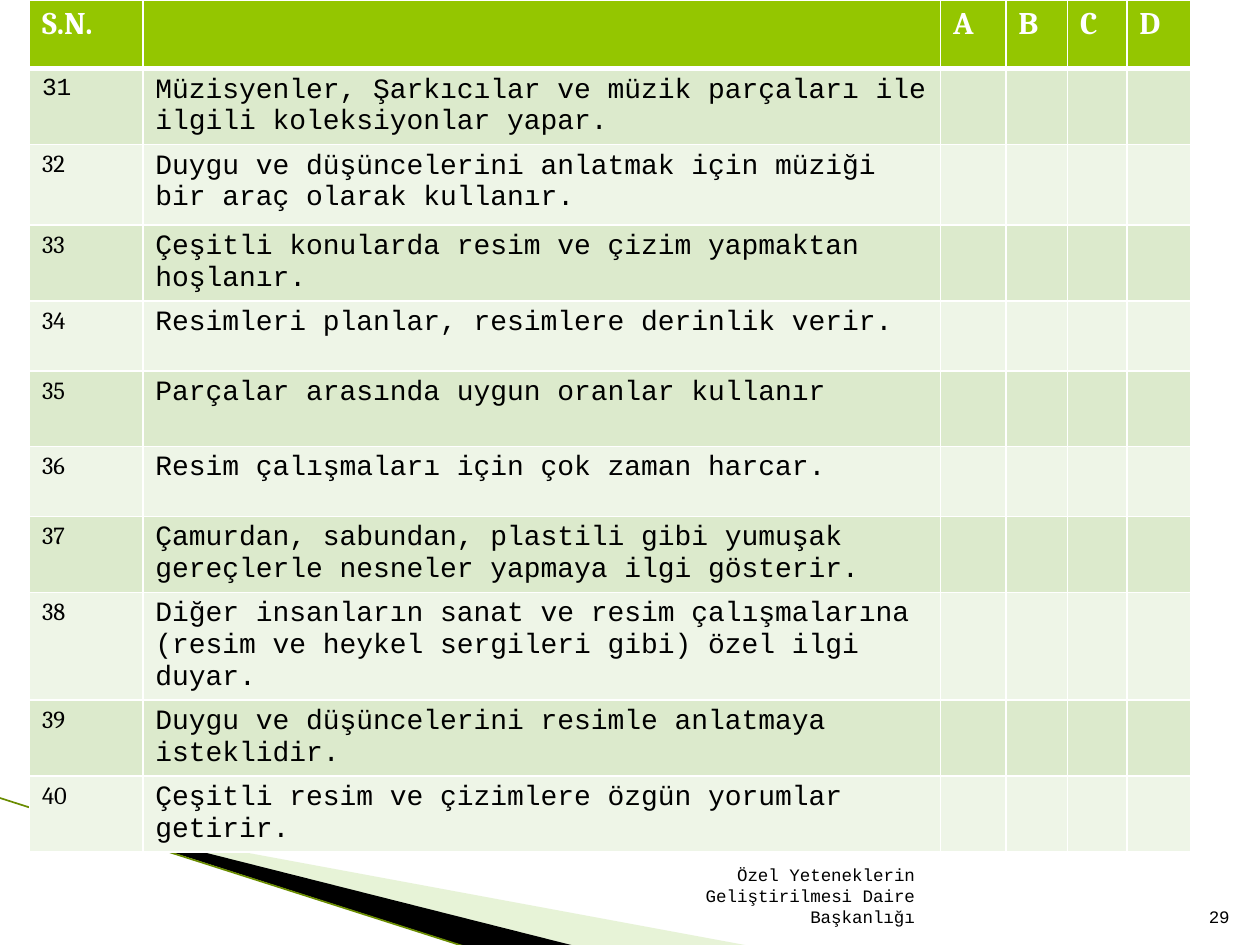
from dataclasses import dataclass

from lxml.etree import SubElement as Sub
from pptx import Presentation
from pptx.dml.color import RGBColor as RGB
from pptx.enum.shapes import MSO_CONNECTOR as Conn
from pptx.enum.text import MSO_ANCHOR as Anchor, PP_ALIGN as Align
from pptx.oxml.ns import qn
from pptx.util import Pt


@dataclass(frozen=True)
class Theme:
    head: str = "94C600"
    odd: str = "DCEACC"
    even: str = "EEF5E7"
    pale: str = "C3E19D"
    edge: str = "6A8C00"
    white: str = "FFFFFF"
    black: str = "000000"
    serif: str = "Cambria"
    mono: str = "Courier New"
    title: int = 18
    body: int = 16
    number: int = 14
    small: int = 10


COLS = [64.8, 455.8, 37.4, 35.3, 33.8, 36.7]
ROWS = [39.2, 39, 46, 40, 40, 43, 40, 40, 43, 43, 40]
HEADS = ["S.N.", "", "A", "B", "C", "D"]
FIRST = 31
ITEMS = [
    "Müzisyenler, Şarkıcılar ve müzik parçaları ile ilgili koleksiyonlar yapar.",
    "Duygu ve düşüncelerini anlatmak için müziği bir araç olarak kullanır.",
    "Çeşitli konularda resim ve çizim yapmaktan hoşlanır.",
    "Resimleri planlar, resimlere derinlik verir.",
    "Parçalar arasında uygun oranlar kullanır",
    "Resim çalışmaları için çok zaman harcar.",
    "Çamurdan, sabundan, plastili gibi yumuşak gereçlerle nesneler yapmaya ilgi gösterir.",
    "Diğer insanların sanat ve resim çalışmalarına (resim ve heykel sergileri gibi) "
    "özel ilgi duyar.",
    "Duygu ve düşüncelerini resimle anlatmaya isteklidir.",
    "Çeşitli resim ve çizimlere özgün yorumlar getirir.",
]


class Page:
    def __init__(self, slide, theme):
        self.slide = slide
        self.theme = theme

    def style(self, frame, text, size, face, color, bold=False):
        frame.text = text
        for run in frame.paragraphs[0].runs:
            font = run.font
            font.size, font.name, font.bold = Pt(size), face, bold
            font.color.rgb = RGB.from_string(color)

    def wedge(self, points, color, alpha=100):
        start, *rest = [(Pt(x), Pt(y)) for x, y in points]
        pen = self.slide.shapes.build_freeform(*start)
        pen.add_line_segments(rest, close=True)
        shape = pen.convert_to_shape()
        shape.shadow.inherit = False
        shape.line.fill.background()
        shape.fill.solid()
        shape.fill.fore_color.rgb = RGB.from_string(color)
        if alpha < 100:
            tint = next(shape._element.spPr.iter(qn("a:srgbClr")))
            Sub(tint, qn("a:alpha"), val=str(alpha * 1000))

    def line(self, x1, y1, x2, y2, color, width):
        line = self.slide.shapes.add_connector(
            Conn.STRAIGHT, Pt(x1), Pt(y1), Pt(x2), Pt(y2))
        line.line.color.rgb = RGB.from_string(color)
        line.line.width = Pt(width)
        Sub(line._element.spPr, qn("a:effectLst"))

    def label(self, x, y, w, h, text):
        frame = self.slide.shapes.add_textbox(Pt(x), Pt(y), Pt(w), Pt(h)).text_frame
        frame.word_wrap = True
        frame.vertical_anchor = Anchor.BOTTOM
        t = self.theme
        self.style(frame, text, t.small, t.mono, t.black)
        frame.paragraphs[0].alignment = Align.RIGHT

    def border(self, cell, top=1, bottom=1):
        props = cell._tc.get_or_add_tcPr()
        for side, width in zip("LRTB", (1, 1, top, bottom)):
            edge = Sub(props, qn(f"a:ln{side}"), w=str(Pt(width)))
            Sub(Sub(edge, qn("a:solidFill")), qn("a:srgbClr"), val=self.theme.white)

    def cell(self, cell, row, col, text):
        t = self.theme
        self.border(cell, top=3 if row == 1 else 1, bottom=3 if row == 0 else 1)
        fill = t.head if row == 0 else t.odd if row % 2 else t.even
        cell.fill.solid()
        cell.fill.fore_color.rgb = RGB.from_string(fill)
        if row == 0:
            look = t.title, t.serif, t.white, True
        elif col == 0:
            look = t.number, t.mono if row == 1 else t.serif, t.black
        else:
            look = t.body, t.mono, t.black
        self.style(cell.text_frame, text, *look)

    def table(self, x, y, cols, rows, data):
        grid = self.slide.shapes.add_table(
            len(rows), len(cols), Pt(x), Pt(y), Pt(sum(cols)), Pt(sum(rows))).table
        for col, width in zip(grid.columns, cols):
            col.width = Pt(width)
        for row, height in zip(grid.rows, rows):
            row.height = Pt(height)
        for r, texts in enumerate(data):
            for c, text in enumerate(texts):
                self.cell(grid.cell(r, c), r, c, text)


def main():
    deck = Presentation()
    deck.slide_width, deck.slide_height = Pt(720), Pt(540)
    theme = Theme()
    page = Page(deck.slides.add_slide(deck.slide_layouts[6]), theme)

    page.wedge([(39.6, 468.5), (428.4, 540.5), (328.3, 540.5), (39.6, 468)],
               theme.pale, alpha=40)
    page.wedge([(38.2, 467.3), (329, 540.7), (267.8, 541.4), (38.9, 468)], theme.black)
    page.line(-0.7, 455.8, 267.1, 541.4, theme.edge, 0.95)

    blank = [""] * 4
    data = [HEADS] + [[str(n), item, *blank] for n, item in enumerate(ITEMS, FIRST)]
    page.table(16.8, 0, COLS, ROWS, data)

    page.label(344.9, 504.7, 185, 28.8,
               "Özel Yeteneklerin Geliştirilmesi Daire Başkanlığı")
    page.label(681, 504.7, 28.8, 28.8, "29")
    deck.save("out.pptx")


if __name__ == "__main__":
    main()
